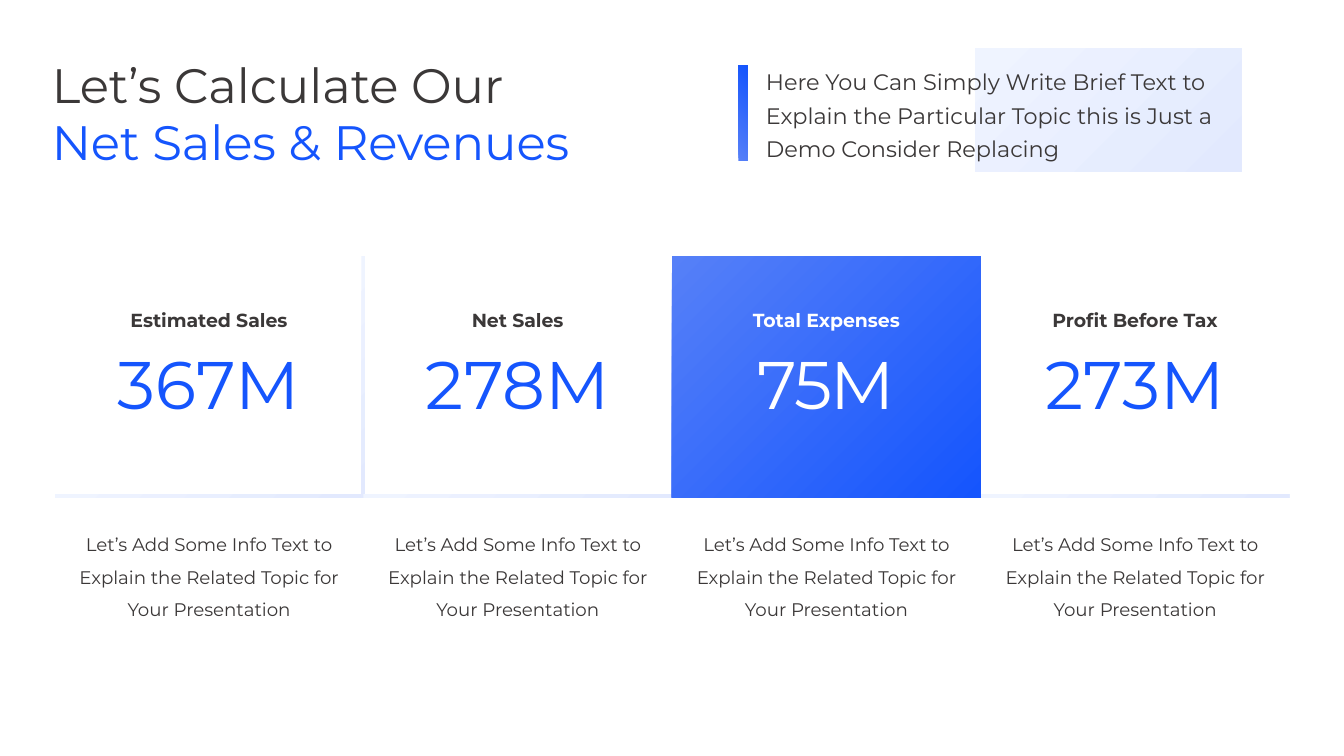
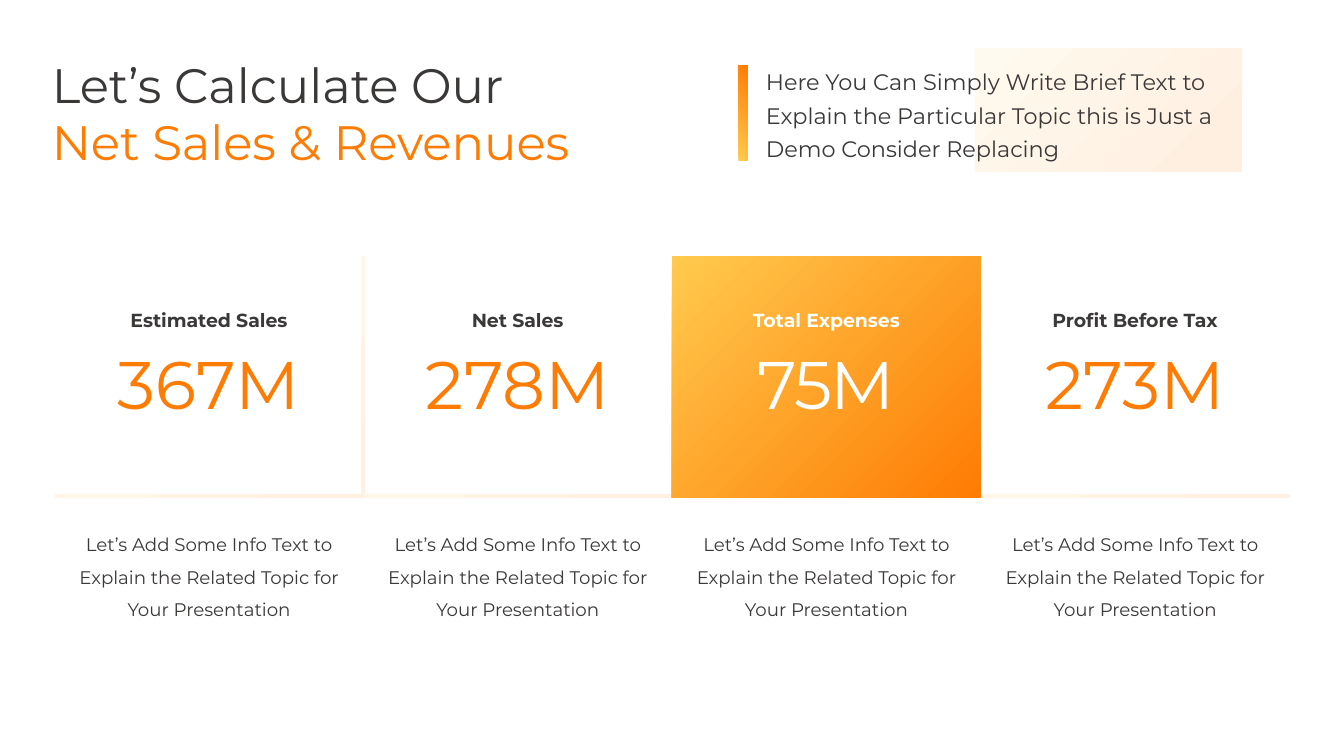
from dataclasses import dataclass

from lxml.etree import SubElement
from pptx import Presentation
from pptx.dml.color import RGBColor
from pptx.enum.shapes import MSO_SHAPE
from pptx.enum.text import MSO_ANCHOR, MSO_AUTO_SIZE, PP_ALIGN
from pptx.oxml.ns import qn
from pptx.slide import Slide
from pptx.text.text import TextFrame
from pptx.util import Pt

# Shared style
FONT = "Montserrat"
DARK = RGBColor(0x3B, 0x38, 0x38)
WHITE = RGBColor(0xFF, 0xFF, 0xFF)
BLUE = RGBColor(0x15, 0x55, 0xFD)
SKY = RGBColor(0x56, 0x80, 0xF8)
MIST = RGBColor(0xE2, 0xE9, 0xFE)
PALE_MIST = RGBColor(0xEF, 0xF4, 0xFF)
ORANGE = RGBColor(0xFE, 0x7C, 0x04)
AMBER = RGBColor(0xFF, 0xCA, 0x4E)
PEACH = RGBColor(0xFF, 0xEF, 0xE1)
PALE_PEACH = RGBColor(0xFF, 0xFA, 0xEF)
APRICOT = RGBColor(0xFF, 0xF0, 0xE1)
PALE_APRICOT = RGBColor(0xFF, 0xF6, 0xE7)

# Grid, in points
LEFT, COL_W = 39, 220.5
TOP, ROW_H = 183, 172.5
RULE = 2.5
BOTTOM = TOP + ROW_H


@dataclass(frozen=True)
class Gradient:
    focus: RGBColor
    far: RGBColor
    start: float = 0


@dataclass(frozen=True)
class Theme:
    accent: Gradient
    panel: Gradient
    rule: Gradient


@dataclass(frozen=True)
class Box:
    left: float
    top: float
    width: float
    height: float

    def emu(self) -> tuple[Pt, Pt, Pt, Pt]:
        return Pt(self.left), Pt(self.top), Pt(self.width), Pt(self.height)


@dataclass(frozen=True)
class TextStyle:
    size: float
    color: RGBColor = DARK
    bold: bool = False
    align: PP_ALIGN = PP_ALIGN.CENTER
    spacing: float | Pt | None = None
    tracking: int = 0


@dataclass(frozen=True)
class Metric:
    label: str
    value: str
    highlight: bool = False
    divider: bool = False


THEMES = [
    Theme(Gradient(BLUE, SKY), Gradient(MIST, PALE_MIST), Gradient(MIST, PALE_MIST)),
    Theme(Gradient(ORANGE, AMBER), Gradient(PEACH, PALE_PEACH, 0.1),
          Gradient(APRICOT, PALE_APRICOT)),
]
METRICS = [
    Metric("Estimated Sales", "367M", divider=True),
    Metric("Net Sales", "278M"),
    Metric("Total Expenses", "75M", highlight=True),
    Metric("Profit Before Tax", "273M"),
]
TITLE = ["Let’s Calculate Our", "Net Sales & Revenues"]
BRIEF = [
    "Here You Can Simply Write Brief Text to",
    "Explain the Particular Topic this is Just a",
    "Demo Consider Replacing",
]
INFO = [
    "Let’s Add Some Info Text to",
    "Explain the Related Topic for",
    "Your Presentation",
]


def add_block(s: Slide, box: Box, grad: Gradient, focus_top: bool = False) -> None:
    """Rectangle with a radial gradient that starts in a right-hand corner."""
    sp = s.shapes.add_shape(MSO_SHAPE.RECTANGLE, *box.emu())
    sp.shadow.inherit = False
    sp.line.fill.background()
    sp.fill.gradient()
    first, last = sp.fill.gradient_stops
    first.color.rgb, first.position = grad.focus, grad.start
    last.color.rgb, last.position = grad.far, 1
    # Swap the linear direction for a circular one
    fill = sp._element.spPr.find(qn("a:gradFill"))
    fill.remove(fill.find(qn("a:lin")))
    circle = SubElement(fill, qn("a:path"), {"path": "circle"})
    edge = {"l": "100000", "b" if focus_top else "t": "100000"}
    SubElement(circle, qn("a:fillToRect"), edge)


def write_lines(tf: TextFrame, lines: list[str], styles: list[TextStyle]) -> None:
    """One paragraph for each line, with its own style."""
    tf.word_wrap = False
    tf.auto_size = MSO_AUTO_SIZE.NONE
    tf.vertical_anchor = MSO_ANCHOR.TOP
    for i, (line, style) in enumerate(zip(lines, styles)):
        p = tf.add_paragraph() if i else tf.paragraphs[0]
        p.alignment = style.align
        p.line_spacing = style.spacing
        r = p.add_run()
        r.text = line
        r.font.name, r.font.size = FONT, Pt(style.size)
        r.font.bold = style.bold
        r.font.color.rgb = style.color
        if style.tracking:
            r.font._element.set("spc", str(style.tracking))


def add_text(s: Slide, box: Box, lines: list[str], style: TextStyle) -> None:
    tf = s.shapes.add_textbox(*box.emu()).text_frame
    write_lines(tf, lines, [style] * len(lines))


def add_header(s: Slide, theme: Theme) -> None:
    # Pale panel, accent bar and brief text
    add_block(s, Box(696.5, 34.5, 190.5, 88), theme.panel)
    add_block(s, Box(527.5, 46.5, 6.5, 68.5), theme.accent, focus_top=True)
    add_text(s, Box(540, 40.5, 341.5, 78), BRIEF,
             TextStyle(16, align=PP_ALIGN.LEFT, spacing=Pt(24)))
    # Two-colour title
    title = s.shapes.title
    title.left, title.top, title.width, title.height = Box(29.8, 35.5, 415.5, 91).emu()
    write_lines(title.text_frame, TITLE,
                [TextStyle(34.5, color, align=PP_ALIGN.LEFT)
                 for color in (DARK, theme.accent.focus)])


def add_metric(s: Slide, theme: Theme, col: int, metric: Metric) -> None:
    left = LEFT + col * COL_W
    # Filled card, or a rule under the column
    if metric.highlight:
        add_block(s, Box(left, TOP, COL_W, ROW_H), theme.accent)
    else:
        add_block(s, Box(left, BOTTOM - RULE, COL_W, RULE), theme.rule)
    if metric.divider:
        add_block(s, Box(left + COL_W - RULE / 2, TOP, RULE, ROW_H), theme.rule)
    # Label, figure and info text
    label_color = WHITE if metric.highlight else DARK
    value_color = WHITE if metric.highlight else theme.accent.focus
    add_text(s, Box(left, 216.7, COL_W, 23.5), [metric.label],
             TextStyle(13.5, label_color, bold=True))
    add_text(s, Box(left, 241, COL_W, 65.5), [metric.value],
             TextStyle(48, value_color, tracking=-100 if metric.highlight else 0))
    add_text(s, Box(left, 369.5, COL_W, 75.5), INFO, TextStyle(13, spacing=1.5))


def main() -> None:
    prs = Presentation()
    prs.slide_width, prs.slide_height = Pt(960), Pt(540)
    for theme in THEMES:
        s = prs.slides.add_slide(prs.slide_layouts.get_by_name("Title Only"))
        add_header(s, theme)
        for col, metric in enumerate(METRICS):
            add_metric(s, theme, col, metric)
    prs.save("out.pptx")


if __name__ == "__main__":
    main()
